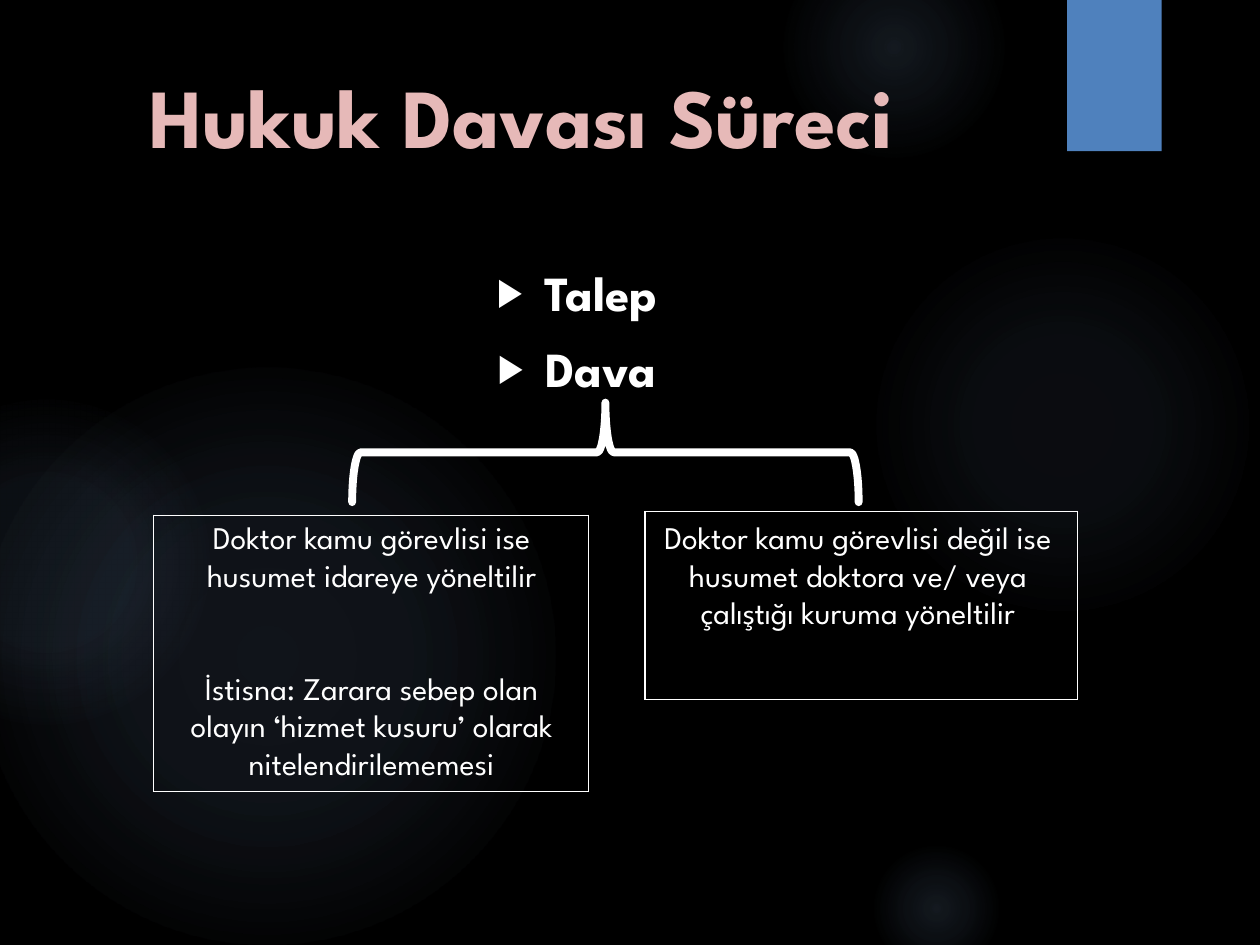
from pptx import Presentation
from pptx.dml.color import RGBColor
from pptx.enum.shapes import MSO_SHAPE as SHAPE
from pptx.enum.text import MSO_ANCHOR as ANCHOR, PP_ALIGN as ALIGN
from pptx.oxml import parse_xml
from pptx.oxml.ns import nsdecls
from pptx.util import Inches, Pt

FONT = "League Spartan"
WHITE, BLACK, PINK, BLUE, GLOW = "FFFFFF", "000000", "E6B9B8", "4F81BD", "8EB4E3"


def color(value):
    return RGBColor.from_string(value)


def inches(box):
    return [Inches(v) for v in box]


def place(shape, box):
    shape.left, shape.top, shape.width, shape.height = inches(box)


def add_run(p, text, size, fill=WHITE, bold=False):
    p.alignment = ALIGN.CENTER
    r = p.add_run()
    r.text = text
    r.font.name = FONT
    r.font.size = Pt(size)
    r.font.bold = bold
    r.font.color.rgb = color(fill)


def add_shape(s, kind, box):
    shape = s.shapes.add_shape(kind, *inches(box))
    shape.shadow.inherit = False
    shape.fill.background()
    shape.line.fill.background()
    return shape


def add_glow(s, box, alphas, edge):
    shape = add_shape(s, SHAPE.OVAL, box)
    stops = "".join(
        f'<a:gs pos="{pos * 1000}"><a:srgbClr val="{GLOW}">'
        f'<a:alpha val="{alpha * 1000}"/></a:srgbClr></a:gs>'
        for pos, alpha in zip((0, 36, edge), (*alphas, 0)))
    gradient = parse_xml(
        f'<a:gradFill {nsdecls("a")} rotWithShape="1"><a:gsLst>{stops}</a:gsLst>'
        '<a:path path="circle"><a:fillToRect l="50000" t="50000" r="50000" b="50000"/>'
        '</a:path></a:gradFill>')
    sp_pr = shape._element.spPr
    sp_pr.replace(sp_pr.find("{*}noFill"), gradient)


def add_backdrop(s):
    s.background.fill.solid()
    s.background.fill.fore_color.rgb = color(BLACK)
    for left, top, size, alphas, edge in (
            (6.89, 1.83, 3.08, (7, 6), 69),
            (6.22, -0.5, 1.75, (14, 7), 73),
            (6.89, 6.67, 1.08, (14, 7), 66),
            (-0.17, 2.92, 4.58, (11, 10), 75),
            (-0.92, 3.17, 2.58, (8, 8), 72)):
        add_glow(s, (left, top, size, size), alphas, edge)
    tab = add_shape(s, SHAPE.RECTANGLE, (8.47, 0, 0.75, 1.2))
    tab.fill.solid()
    tab.fill.fore_color.rgb = color(BLUE)


def fill_title(s, box, text):
    title = s.shapes.title
    s.shapes._spTree.append(title._element)
    place(title, box)
    tf = title.text_frame
    tf.vertical_anchor = ANCHOR.TOP
    add_run(tf.paragraphs[0], text, 48, PINK, True)


def fill_body(s, box, items):
    body = s.placeholders[1]
    s.shapes._spTree.append(body._element)
    place(body, box)
    tf = body.text_frame
    for i, item in enumerate(items):
        p = tf.add_paragraph() if i else tf.paragraphs[0]
        p.space_before = Pt(10 if i else 0)
        p_pr = p._p.get_or_add_pPr()
        p_pr.set("marL", str(Inches(0.38)))
        p_pr.set("indent", str(Inches(-0.38)))
        for xml in (f'<a:buClr {nsdecls("a")}><a:srgbClr val="{WHITE}"/></a:buClr>',
                    f'<a:buSzPct {nsdecls("a")} val="80000"/>',
                    f'<a:buChar {nsdecls("a")} char="▶"/>'):
            p_pr.append(parse_xml(xml))
        add_run(p, item, 28, bold=True)


def add_brace(s, box):
    brace = add_shape(s, SHAPE.RIGHT_BRACE, box)
    brace.rotation = 270
    brace.line.color.rgb = color(WHITE)
    brace.line.width = Pt(4.5)
    brace.line._get_or_add_ln().set("cap", "rnd")


def add_note(s, box, texts):
    tf = s.shapes.add_textbox(*inches(box)).text_frame
    tf.word_wrap = True
    for i, text in enumerate(texts):
        p = tf.add_paragraph() if i else tf.paragraphs[0]
        p.space_before = Pt(43 if i else 0)
        add_run(p, text, 18)


def add_frame(s, box):
    table = s.shapes.add_table(1, 1, *inches(box)).table
    table.first_row = table.horz_banding = False
    cell = table.cell(0, 0)
    cell.fill.background()
    tc_pr = cell._tc.get_or_add_tcPr()
    for i, side in enumerate("LRTB"):
        tc_pr.insert(i, parse_xml(
            f'<a:ln{side} {nsdecls("a")} w="{Pt(1)}"><a:solidFill>'
            f'<a:srgbClr val="{WHITE}"/></a:solidFill></a:ln{side}>'))


def main():
    prs = Presentation()
    prs.slide_width, prs.slide_height = Inches(10), Inches(7.5)
    s = prs.slides.add_slide(prs.slide_layouts[1])
    add_backdrop(s)
    fill_title(s, (0.28, 0.46, 7.72, 1.53), "Hukuk Davası Süreci")
    fill_body(s, (0.91, 2.03, 7.34, 4.59), ("Talep", "Dava"))
    add_brace(s, (4.41, 1.58, 0.79, 4.02))
    add_note(s, (1.22, 4.06, 3.46, 2.22), (
        "Doktor kamu görevlisi ise husumet idareye yöneltilir",
        "İstisna: Zarara sebep olan olayın ‘hizmet kusuru’ olarak nitelendirilememesi"))
    add_note(s, (5.08, 4.06, 3.46, 1.31), (
        "Doktor kamu görevlisi değil ise husumet doktora ve/ veya "
        "çalıştığı kuruma yöneltilir",))
    add_frame(s, (1.22, 4.09, 3.45, 2.19))
    add_frame(s, (5.12, 4.06, 3.43, 1.49))
    prs.save("out.pptx")


if __name__ == "__main__":
    main()
